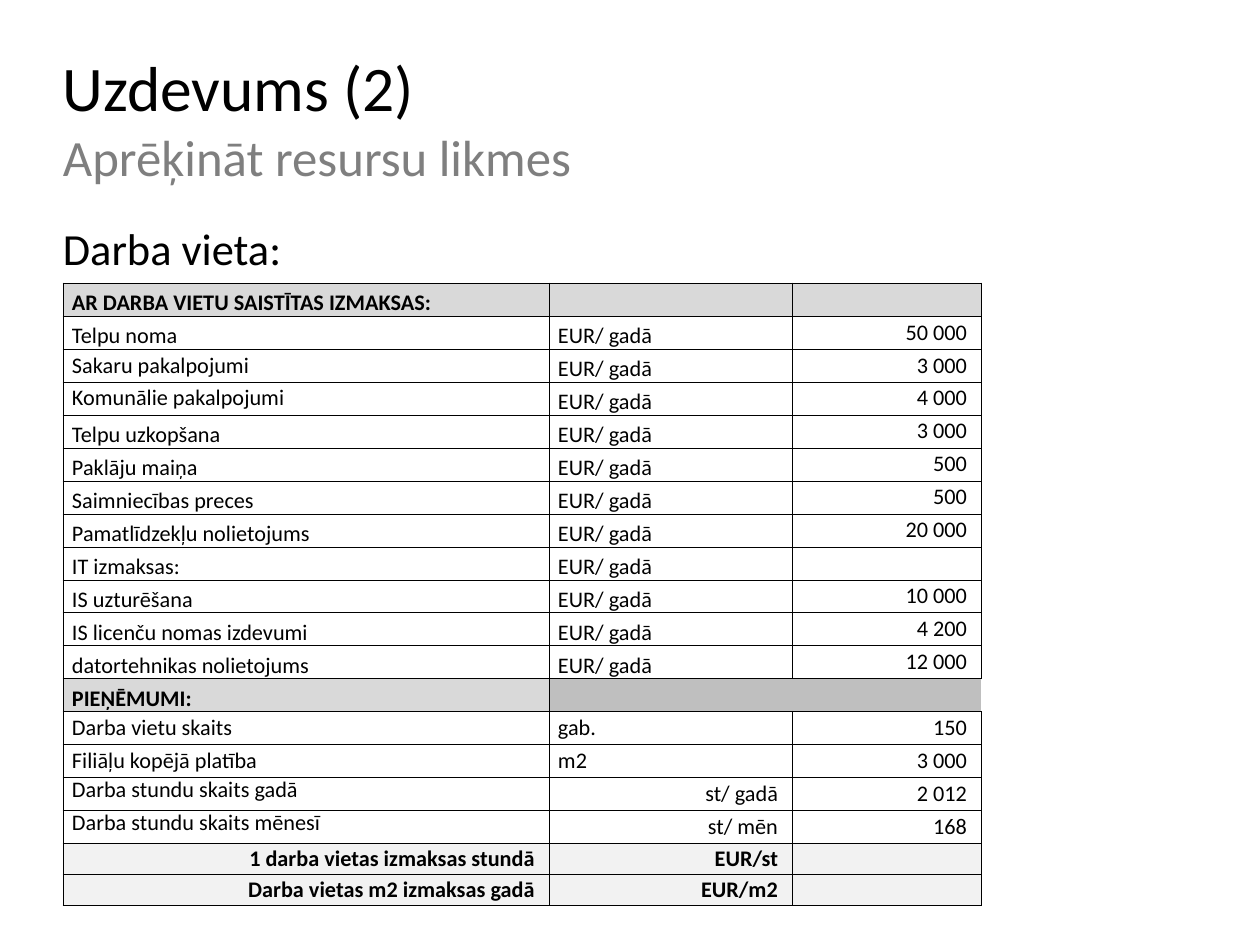
from lxml import etree
from pptx import Presentation
from pptx import util as u
from pptx.dml.color import RGBColor
from pptx.enum import text
from pptx.oxml.ns import qn

# Content
TITLE = [("Uzdevums (2)", 40, "black"), ("Aprēķināt resursu likmes", 32, "grey")]
HEADING = [("Darba vieta:", 28, "black")]
YEARLY = "EUR/ gadā"
ROWS = [
    ("head", "AR DARBA VIETU SAISTĪTAS IZMAKSAS:", "", ""),
    ("cost", "Telpu noma", YEARLY, "50 000"),
    ("cost_mid", "Sakaru pakalpojumi", YEARLY, "3 000"),
    ("cost_mid", "Komunālie pakalpojumi", YEARLY, "4 000"),
    ("cost", "Telpu uzkopšana", YEARLY, "3 000"),
    ("cost", "Paklāju maiņa", YEARLY, "500"),
    ("cost", "Saimniecības preces", YEARLY, "500"),
    ("cost", "Pamatlīdzekļu nolietojums", YEARLY, "20 000"),
    ("cost", "IT izmaksas:", YEARLY, ""),
    ("cost", "IS uzturēšana", YEARLY, "10 000"),
    ("cost", "IS licenču nomas izdevumi", YEARLY, "4 200"),
    ("cost", "datortehnikas nolietojums", YEARLY, "12 000"),
    ("assume_head", "PIEŅĒMUMI:", "", ""),
    ("count", "Darba vietu skaits", "gab.", "150"),
    ("count", "Filiāļu kopējā platība", "m2", "3 000"),
    ("hours", "Darba stundu skaits gadā", "st/ gadā", "2 012"),
    ("hours", "Darba stundu skaits mēnesī", "st/ mēn", "168"),
    ("total", "1 darba vietas izmaksas stundā", "EUR/st", ""),
    ("total", "Darba vietas m2 izmaksas gadā", "EUR/m2", ""),
]

# Look: anchors, alignments, bold, fills and borders per column
COLORS = {"black": "000000", "grey": "7F7F7F", "light": "D9D9D9",
          "mid": "BFBFBF", "pale": "F2F2F2"}
BOXED = ("LRTB",) * 3
PLAIN = (None,) * 3
KINDS = {
    "head": ("bbb", "lll", True, ("light",) * 3, BOXED),
    "cost": ("bbm", "llr", False, PLAIN, BOXED),
    "cost_mid": ("mbm", "llr", False, PLAIN, BOXED),
    "assume_head": ("bbb", "lll", True, ("light", "mid", "mid"), ("LRTB", "LTB", "TB")),
    "count": ("mmm", "llr", False, PLAIN, BOXED),
    "hours": ("tmm", "lrr", False, PLAIN, BOXED),
    "total": ("mmm", "rrr", True, ("pale",) * 3, BOXED),
}
ANCHORS = {"t": text.MSO_ANCHOR.TOP, "m": text.MSO_ANCHOR.MIDDLE, "b": text.MSO_ANCHOR.BOTTOM}
ALIGNS = {"l": text.PP_ALIGN.LEFT, "r": text.PP_ALIGN.RIGHT}

# Layout in px
LEFT, WIDTH = 63, 1134
COLS = (486, 243, 189)
TABLE_TOP, ROW_H, TOTAL_H = 283, 33, 31
PAD, PAD_RIGHT = 9, 14  # right-aligned text stands further from the edge
CELL_PT, CELL_LINE, TEXT_LINE = 14, 0.93, 1.01


def px(n):
    return u.Emu(n * 8000)


def rgb(name):
    return RGBColor.from_string(COLORS[name])


def add_run(p, words, size, color, bold=False):
    r = p.add_run()
    r.text = words
    for key, value in {"name": "Calibri", "size": u.Pt(size), "bold": bold}.items():
        setattr(r.font, key, value)
    r.font.color.rgb = rgb(color)


def add_text(s, top, height, lines, anchor):
    tf = s.shapes.add_textbox(px(LEFT), px(top), px(WIDTH), px(height)).text_frame
    for key, value in {"word_wrap": True, "vertical_anchor": ANCHORS[anchor], "margin_left": 0,
                       "margin_right": 0, "margin_top": 0, "margin_bottom": 0}.items():
        setattr(tf, key, value)
    p = tf.paragraphs[0]
    p.line_spacing = TEXT_LINE
    for i, line in enumerate(lines):
        if i:
            p.add_line_break()
        add_run(p, *line)


def set_borders(cell, sides):
    tc_pr = cell._tc.get_or_add_tcPr()
    for side in "LRTB":
        ln = etree.SubElement(tc_pr, qn("a:ln" + side), w=str(u.Pt(0.5)))
        if side in sides:
            fill = etree.SubElement(ln, qn("a:solidFill"))
            etree.SubElement(fill, qn("a:srgbClr"), val=COLORS["black"])
        else:
            etree.SubElement(ln, qn("a:noFill"))


def fill_cell(cell, words, anchor, align, bold, fill, sides):
    for key, value in {"vertical_anchor": ANCHORS[anchor], "margin_left": px(PAD),
                       "margin_right": px(PAD_RIGHT if align == "r" else PAD),
                       "margin_top": 0, "margin_bottom": 0}.items():
        setattr(cell, key, value)
    set_borders(cell, sides)
    if fill:
        cell.fill.solid()
        cell.fill.fore_color.rgb = rgb(fill)
    else:
        cell.fill.background()
    p = cell.text_frame.paragraphs[0]
    p.alignment, p.line_spacing = ALIGNS[align], CELL_LINE
    if words:
        add_run(p, words, CELL_PT, "black", bold)
    else:  # keeps empty cells from stretching the row
        etree.SubElement(p._p, qn("a:endParaRPr"), sz=str(CELL_PT * 100))


def add_costs(s):
    heights = [TOTAL_H if row[0] == "total" else ROW_H for row in ROWS]
    table = s.shapes.add_table(len(ROWS), len(COLS), px(LEFT), px(TABLE_TOP),
                               px(sum(COLS)), px(sum(heights))).table
    table.first_row = table.horz_banding = False
    for col, width in zip(table.columns, COLS):
        col.width = px(width)
    for row, height, (kind, *words) in zip(table.rows, heights, ROWS):
        row.height = px(height)
        anchors, aligns, bold, fills, borders = KINDS[kind]
        for i, cell in enumerate(row.cells):
            fill_cell(cell, words[i], anchors[i], aligns[i], bold, fills[i], borders[i])


def main():
    prs = Presentation()
    prs.slide_width, prs.slide_height = px(1260), px(945)
    s = prs.slides.add_slide(prs.slide_layouts[6])
    # Title, heading and cost table
    add_text(s, 38, 158, TITLE, "m")
    add_text(s, 221, 623, HEADING, "t")
    add_costs(s)
    prs.save("out.pptx")


if __name__ == "__main__":
    main()
